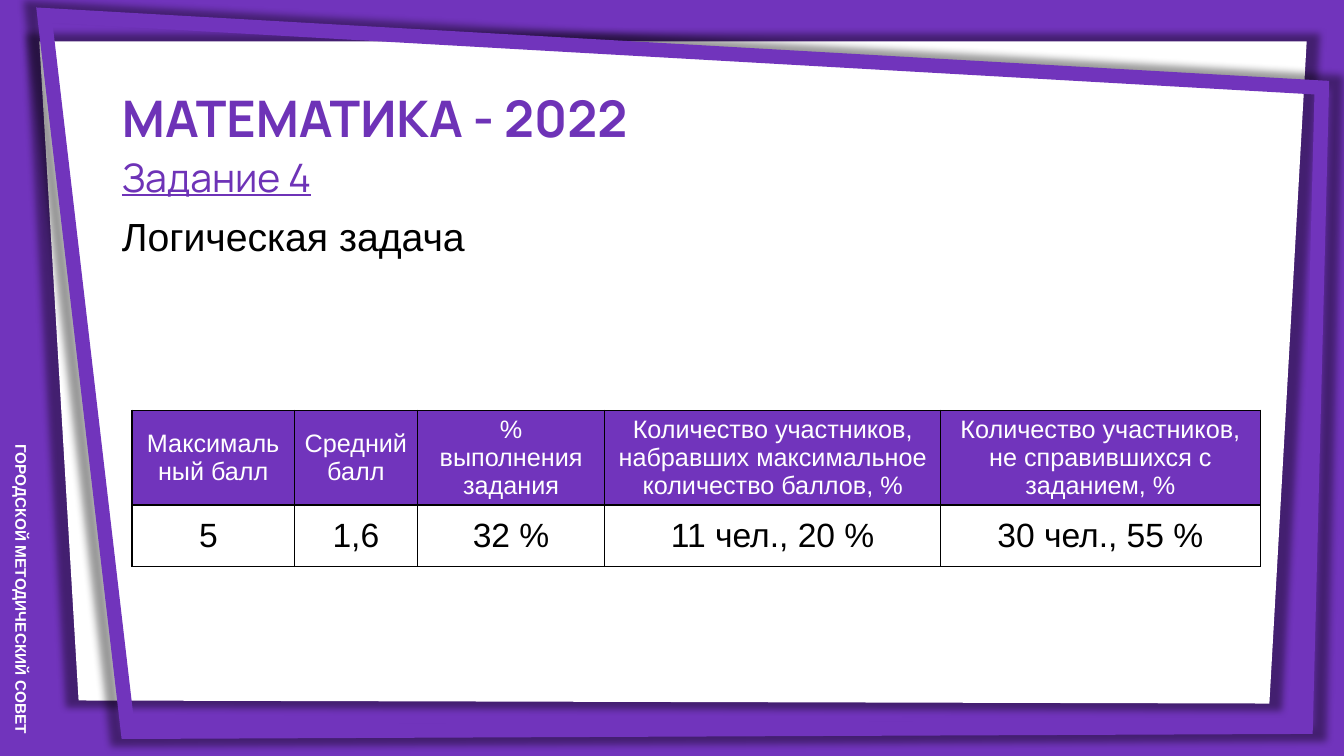
"""Build the slide with the results of task 4 in mathematics."""
from lxml import etree
from pptx import Presentation, util as u
from pptx.dml.color import RGBColor
from pptx.enum import text
from pptx.oxml import parse_xml
from pptx.oxml.ns import nsdecls, qn

HUES = {"back": "7134BC", "head": "6E33B7", "white": "FFFFFF", "black": "000000"}
LEFT, MID, JUST = text.PP_ALIGN.LEFT, text.PP_ALIGN.CENTER, text.PP_ALIGN.JUSTIFY
PAPER = [(0.39, 0.41), (12.96, 0.41), (12.59, 6.98), (0.78, 6.95)]
FRAME = [(0.44, 0.15), (1.27, 7.26), (12.95, 7.21), (13.11, 0.87)]
COLS = [1.61, 1.22, 1.86, 3.33, 3.17]
ROWS = [0.94, 0.61]
CELLS = [
    ["Максимальный балл", "Средний балл", "% выполнения задания",
     "Количество участников, набравших максимальное количество баллов, %",
     "Количество участников, не справившихся с заданием, %"],
    ["5 ", "1,6", "32 %", "11 чел., 20 %", "30 чел., 55 %"],
]


def hue(name):
    return RGBColor.from_string(HUES[name])


def write(frame, words, size, color, font="Arial", align=LEFT, bold=False, under=False):
    para = frame.paragraphs[0]
    para.alignment = align
    run = para.add_run()
    run.text = words
    run.font.name, run.font.size = font, u.Pt(size)
    run.font.bold, run.font.underline = bold, under
    run.font.color.rgb = hue(color)


def place(shape, left, top, width, height):
    shape.left, shape.top = u.Inches(left), u.Inches(top)
    shape.width, shape.height = u.Inches(width), u.Inches(height)
    frame = shape.text_frame
    frame.word_wrap = True
    frame.auto_size = text.MSO_AUTO_SIZE.NONE
    frame.vertical_anchor = text.MSO_ANCHOR.TOP
    return frame


def label(slide, box, words, size, color, **style):
    shape = slide.shapes.add_textbox(0, 0, 0, 0)
    write(place(shape, *box), words, size, color, **style)
    return shape


def outline(slide, points):
    (left, top), *rest = [(u.Inches(x), u.Inches(y)) for x, y in points]
    pen = slide.shapes.build_freeform(left, top)
    pen.add_line_segments(rest, close=True)
    shape = pen.convert_to_shape()
    shape.shadow.inherit = False
    glow = shape.element.spPr.find(qn("a:effectLst"))
    glow.append(parse_xml(
        f'<a:outerShdw {nsdecls("a")} blurRad="63500" sx="102000" sy="102000" '
        f'algn="ctr" rotWithShape="0"><a:srgbClr val="{HUES["black"]}">'
        '<a:alpha val="40000"/></a:srgbClr></a:outerShdw>'))
    return shape


def paper(slide):
    shape = outline(slide, PAPER)
    shape.fill.solid()
    shape.fill.fore_color.rgb = hue("white")
    shape.line.fill.background()


def border(slide):
    shape = outline(slide, FRAME)
    shape.fill.background()
    shape.line.color.rgb = hue("back")
    shape.line.width = u.Pt(10.25)
    edge = shape.element.spPr.find(qn("a:ln"))
    etree.SubElement(edge, qn("a:miter")).set("lim", "800000")


def rule(cell):
    props = cell._tc.get_or_add_tcPr()
    for spot, side in enumerate("LRTB"):
        props.insert(spot, parse_xml(
            f'<a:ln{side} {nsdecls("a")} w="12700"><a:solidFill>'
            f'<a:srgbClr val="{HUES["black"]}"/></a:solidFill></a:ln{side}>'))


def table(slide):
    box = [u.Inches(n) for n in (1.31, 4.07, sum(COLS), sum(ROWS))]
    grid = slide.shapes.add_table(len(ROWS), len(COLS), *box).table
    for col, width in zip(grid.columns, COLS):
        col.width = u.Inches(width)
    looks = [("back", "white", 18), ("white", "black", 24)]
    for row, height, line, look in zip(grid.rows, ROWS, CELLS, looks):
        row.height = u.Inches(height)
        fill, color, size = look
        for cell, words in zip(row.cells, line):
            cell.fill.solid()
            cell.fill.fore_color.rgb = hue(fill)
            cell.vertical_anchor = text.MSO_ANCHOR.MIDDLE
            write(cell.text_frame, words, size, color, align=MID)
            rule(cell)


def main():
    deck = Presentation()
    deck.slide_width, deck.slide_height = u.Inches(13.33), u.Inches(7.5)
    slide = deck.slides.add_slide(deck.slide_layouts[5])
    slide.background.fill.solid()
    slide.background.fill.fore_color.rgb = hue("back")

    side = label(slide, (-1.45, 5.64, 3.3, 0.41), "ГОРОДСКОЙ МЕТОДИЧЕСКИЙ СОВЕТ",
                 11, "white", align=MID, bold=True)
    side.rotation = 90
    side.text_frame.margin_top = side.text_frame.margin_bottom = u.Inches(0.1)
    paper(slide)
    border(slide)

    title = slide.shapes.title
    slide.shapes._spTree.append(title.element)
    write(place(title, 1.11, 0.81, 6.7, 0.71), "МАТЕМАТИКА - 2022", 36, "head",
          font="Manrope", bold=True)
    table(slide)
    label(slide, (1.11, 1.47, 2.87, 0.71), "Задание 4", 28, "head",
          font="Manrope", under=True)
    label(slide, (1.11, 2.06, 11.55, 0.71), "Логическая задача", 28, "black", align=JUST)
    deck.save("out.pptx")


if __name__ == "__main__":
    main()
